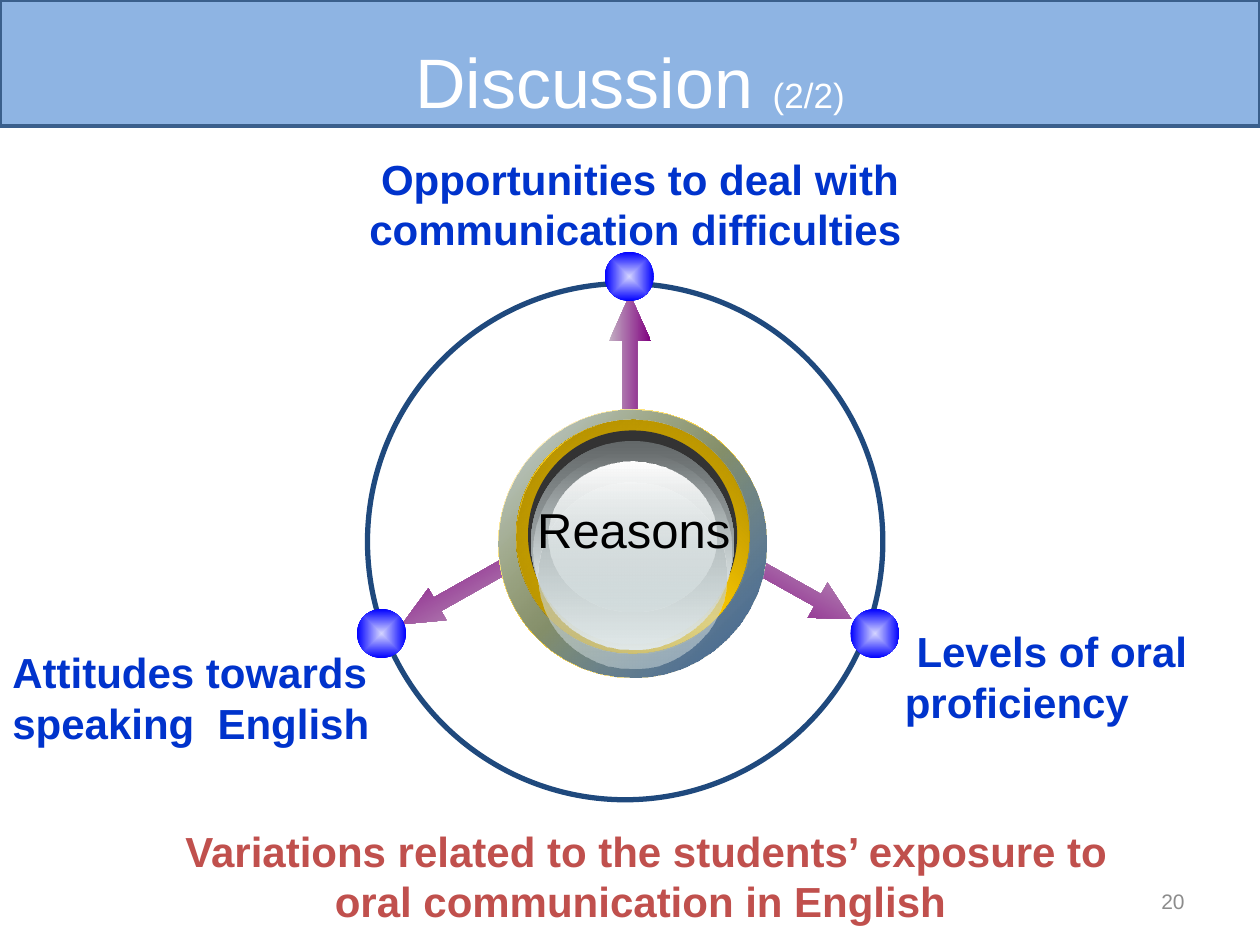
from dataclasses import dataclass

from pptx import Presentation
from pptx.dml.color import RGBColor
from pptx.enum.shapes import MSO_SHAPE as Preset
from pptx.enum.text import MSO_ANCHOR as Anchor, PP_ALIGN as Align
from pptx.oxml import parse_xml
from pptx.oxml.ns import nsdecls
from pptx.util import Pt


@dataclass(frozen=True)
class Theme:
    font: str = "Arial"
    banner: str = "8EB4E3"
    banner_line: str = "3A5F8C"
    orbit: str = "1F497D"
    label: str = "0033CC"
    summary: str = "C0504D"
    number: str = "8C8C8C"
    white: str = "FFFFFF"
    black: str = "000000"
    rim: str = "333333"
    arrow: tuple = (("C3B0C3", 100), ("800080", 100))
    node: tuple = (("D5D5FF", 100), ("0000FF", 100))
    title_size: int = 40
    hub_size: int = 28
    label_size: int = 24
    part_size: int = 20
    number_size: int = 12


theme = Theme()
deck = Presentation()
deck.slide_width, deck.slide_height = Pt(720), Pt(540)
page = deck.slides.add_slide(deck.slide_layouts[6])


def add_shape(preset, left, top, width, height, fill=None, angle=None):
    """Add a shape; fill is a colour or (colour, opacity) stops, radial if angle is None."""
    shape = page.shapes.add_shape(preset, Pt(left), Pt(top), Pt(width), Pt(height))
    shape.shadow.inherit = False
    shape.line.fill.background()
    if isinstance(fill, str):
        shape.fill.solid()
        shape.fill.fore_color.rgb = RGBColor.from_string(fill)
        return shape
    shape.fill.background()
    if fill:
        stops = "".join(
            f'<a:gs pos="{100000 * i // (len(fill) - 1)}"><a:srgbClr val="{color}">'
            f'<a:alpha val="{opacity * 1000}"/></a:srgbClr></a:gs>'
            for i, (color, opacity) in enumerate(fill))
        if angle is None:
            direction = ('<a:path path="shape"><a:fillToRect l="50000" t="50000" '
                         'r="50000" b="50000"/></a:path>')
        else:
            direction = f'<a:lin ang="{angle * 60000}" scaled="1"/>'
        gradient = parse_xml(f'<a:gradFill {nsdecls("a")} rotWithShape="1">'
                             f'<a:gsLst>{stops}</a:gsLst>{direction}</a:gradFill>')
        properties = shape._element.spPr
        empty_fill = properties.find("{*}noFill")
        properties.replace(empty_fill, gradient)
    return shape


def add_text(left, top, width, height, lines, size, color, align=Align.LEFT, bold=False):
    box = page.shapes.add_textbox(Pt(left), Pt(top), Pt(width), Pt(height))
    frame = box.text_frame
    frame.word_wrap = True
    frame.text = lines
    for para in frame.paragraphs:
        para.alignment = align
        para.font.name, para.font.size, para.font.bold = theme.font, Pt(size), bold
        para.font.color.rgb = RGBColor.from_string(color)
    return box


# Title banner
banner = add_shape(Preset.RECTANGLE, 0, 0, 720, 72, theme.banner)
banner.line.color.rgb = RGBColor.from_string(theme.banner_line)
banner.line.width = Pt(2)
frame = banner.text_frame
frame.margin_top, frame.margin_bottom = Pt(22), Pt(2)
frame.vertical_anchor = Anchor.MIDDLE
para = frame.paragraphs[0]
para.alignment = Align.CENTER
para.font.name = theme.font
para.font.color.rgb = RGBColor.from_string(theme.white)
for words, size in (("Discussion ", theme.title_size), ("(2/2)", theme.part_size)):
    span = para.add_run()
    span.text, span.font.size = words, Pt(size)

# Arrows: left, top, width, height, rotation, shaft share, head share
for left, top, width, height, turn, shaft, head in (
    (324, 192.4, 72, 23.8, 270, 0.35, 1.11),
    (427.7, 326.9, 62.6, 23, 29.2, 0.35, 0.95),
    (225.4, 329.8, 67, 20.9, 150.6, 0.42, 1.11),
):
    arrow = add_shape(Preset.RIGHT_ARROW, left, top, width, height, theme.arrow, 90)
    arrow.rotation = turn
    arrow.adjustments[0], arrow.adjustments[1] = shaft, head

# Orbit with its three nodes
orbit = add_shape(Preset.OVAL, 210, 162, 294.5, 295)
orbit.line.color.rgb = RGBColor.from_string(theme.orbit)
orbit.line.width = Pt(3)
for left, top in ((204, 348), (345.6, 144), (486, 348)):
    add_shape(Preset.OVAL, left, top, 28, 28, theme.node)

# Hub: stacked discs on one vertical axis, given as top, width, height, fill, angle
hub_axis = 361.5
for top, width, height, fill, angle in (
    (234, 153.4, 153.4, (("FFFFFF", 100), ("FFCC00", 100), ("FFFFFF", 100)), 45),
    (234, 153.4, 153.4, (("4F81BD", 32), ("395C87", 100)), 45),
    (240, 133.2, 133.2, (("8A6E00", 100), ("FFCC00", 100), ("8A6E00", 100)), 315),
    (240, 133.2, 133.2, (("A28200", 100), ("FFCC00", 0)), 45),
    (246, 119.5, 119.5, theme.rim, None),
    (252, 116, 116, (("636869", 100), ("D6E1E2", 100)), 90),
    (258, 113, 113, (("D6E1E2", 0), ("F1F5F5", 100)), 90),
    (276, 107.3, 105.8, (("AAB2B3", 100), ("D6E1E2", 48)), 90),
    (264, 95.8, 85.7, (("FFFFFF", 100), ("D6E1E2", 38)), 90),
):
    add_shape(Preset.OVAL, hub_axis - width / 2, top, width, height, fill, angle)
add_text(270, 282, 184.3, 41, "Reasons", theme.hub_size, theme.black, Align.CENTER)

# Reasons around the orbit
for left, top, width, words in (
    (204, 84, 354, " Opportunities to deal with\ncommunication difficulties"),
    (510, 354, 216, " Levels of oral proficiency"),
    (0, 366, 222, "Attitudes towards speaking  English"),
):
    add_text(left, top, width, 65, words, theme.label_size, theme.label, bold=True)

# Summary and slide number
add_text(78, 468, 576, 65,
         " Variations related to the students’ exposure to oral communication in English",
         theme.label_size, theme.summary, Align.CENTER, bold=True)
number = add_text(516, 500.5, 168, 28.8, "20", theme.number_size, theme.number, Align.RIGHT)
number.text_frame.vertical_anchor = Anchor.MIDDLE

deck.save("out.pptx")
